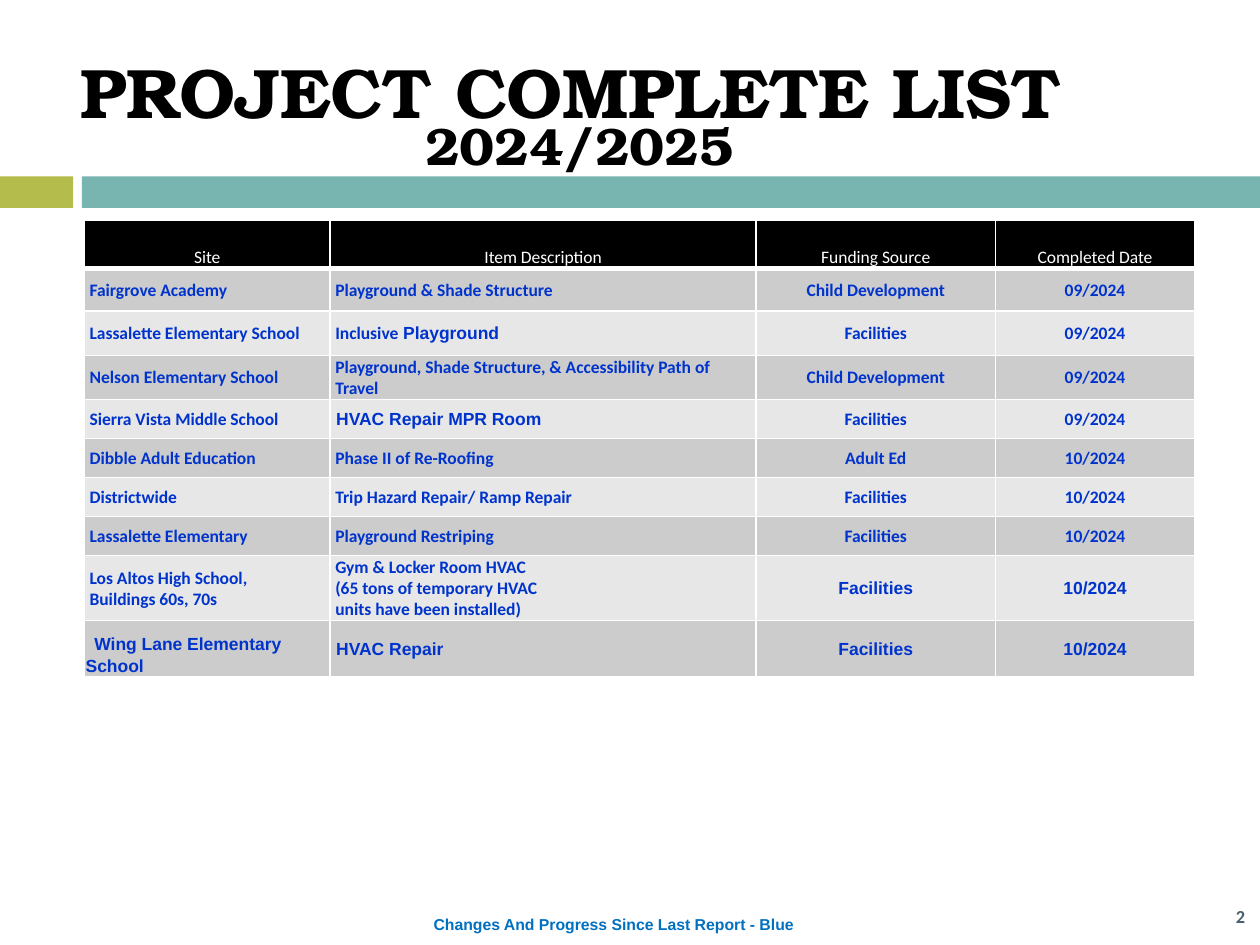
"""Build the 2024/2025 list of completed projects."""
from lxml import etree
from pptx import Presentation, util as u
from pptx.dml.color import RGBColor
from pptx.enum import shapes, text
from pptx.oxml.ns import qn

HUES = {"black": "000000", "white": "FFFFFF", "blue": "0033CC", "foot": "0070C0",
        "slate": "4A606E", "olive": "B4BC4C", "teal": "79B5B0",
        "dark": "CCCCCC", "light": "E7E7E7"}
STYLES = {
    "head": {"name": "Calibri", "size": 10, "bold": False, "color": "white"},
    "body": {"name": "Calibri", "size": 10, "bold": True, "color": "blue"},
    "arial": {"name": "Arial", "size": 10, "bold": True, "color": "blue"},
    "wide": {"name": "Arial", "size": 18, "bold": False, "color": "black"},
    "title": {"name": "TeX Gyre Bonum", "size": 40, "bold": True, "color": "black"},
    "year": {"name": "TeX Gyre Bonum", "size": 30, "bold": True, "color": "black"},
    "foot": {"name": "Arial", "size": 9, "bold": True, "color": "foot"},
    "page": {"name": "Calibri", "size": 10.5, "bold": True, "color": "slate"},
}
HEADS = ["Site", "Item Description", "Funding Source", "Completed Date"]
ROWS = [
    [" Fairgrove Academy", " Playground & Shade Structure", "Child Development", "09/2024"],
    [" Lassalette Elementary School", [("body", " Inclusive"), ("arial", " Playground")],
     "Facilities", "09/2024"],
    [" Nelson Elementary School",
     " Playground, Shade Structure, & Accessibility Path of\n Travel",
     "Child Development", "09/2024"],
    [" Sierra Vista Middle School", [("arial", " HVAC Repair MPR Room")],
     "Facilities", "09/2024"],
    [" Dibble Adult Education", " Phase II of Re-Roofing", "Adult Ed", "10/2024"],
    [" Districtwide", " Trip Hazard Repair/ Ramp Repair", "Facilities", "10/2024"],
    [" Lassalette Elementary", " Playground Restriping", "Facilities", "10/2024"],
    [" Los Altos High School,\n Buildings 60s, 70s",
     " Gym & Locker Room HVAC\n (65 tons of temporary HVAC\n units have been installed)",
     [("arial", "Facilities")], [("arial", "10/2024")]],
    [[("wide", " "), ("arial", "Wing Lane Elementary School")],
     [("arial", " HVAC Repair")], [("arial", "Facilities")], [("arial", "10/2024")]],
]
COLS = [1.95, 3.38, 1.9, 1.58]
TALLS = [0.38, 0.34, 0.35, 0.35] + [0.31] * 6
BARS = [("olive", 0, 0.58), ("teal", 0.65, 9.35)]
LABELS = [
    ("title", "PROJECT COMPLETE LIST", (0, 0.38, 9.06, 0.67), "CENTER", "MIDDLE"),
    ("foot", "Changes And Progress Since Last Report - Blue",
     (-0.13, 7.21, 10, 0.25), "CENTER", "TOP"),
    ("year", "2024/2025", (0, 0.81, 9.2, 0.67), "CENTER", "MIDDLE"),
    ("page", "2", (4.05, 7.07, 5.93, 0.4), "RIGHT", "MIDDLE"),
]


def tint(key):
    return RGBColor.from_string(HUES[key])


def paint(item, key):
    item.fill.solid()
    item.fill.fore_color.rgb = tint(key)


def write(frame, lines, align):
    for i, runs in enumerate(lines):
        para = frame.paragraphs[0] if i == 0 else frame.add_paragraph()
        para.alignment = text.PP_ALIGN[align]
        for style, words in runs:
            run = para.add_run()
            run.text = words
            for name, value in STYLES[style].items():
                if name == "color":
                    run.font.color.rgb = tint(value)
                else:
                    setattr(run.font, name, u.Pt(value) if name == "size" else value)


def edge(cell, sides):
    props = cell._tc.get_or_add_tcPr()
    for i, (side, width) in enumerate(sides.items()):
        line = etree.Element(qn("a:ln" + side), w=str(u.Pt(width)))
        fill = etree.SubElement(line, qn("a:solidFill"))
        etree.SubElement(fill, qn("a:srgbClr"), val=HUES["white"])
        props.insert(i, line)


def draw_bars(slide):
    for key, left, width in BARS:
        bar = slide.shapes.add_shape(shapes.MSO_SHAPE.RECTANGLE, u.Inches(left),
                                     u.Inches(1.4), u.Inches(width), u.Inches(0.25))
        bar.shadow.inherit = False
        paint(bar, key)
        bar.line.fill.background()


def draw_table(slide):
    area = [u.Inches(n) for n in (0.67, 1.75, sum(COLS), sum(TALLS))]
    grid = slide.shapes.add_table(len(TALLS), len(COLS), *area).table
    grid.first_row = grid.horz_banding = False
    for col, width in zip(grid.columns, COLS):
        col.width = u.Inches(width)
    for r, (row, tall) in enumerate(zip([HEADS] + ROWS, TALLS)):
        grid.rows[r].height = u.Inches(tall)
        for c, words in enumerate(row):
            cell = grid.cell(r, c)
            base = "body" if r else "head"
            lines = [words] if isinstance(words, list) else [
                [(base, line)] for line in words.split("\n")]
            write(cell.text_frame, lines, "LEFT" if r and c < 2 else "CENTER")
            look = {"margin_left": u.Inches(0.01), "margin_right": u.Inches(0.01),
                    "margin_top": u.Inches(0.01), "margin_bottom": 0,
                    "vertical_anchor": text.MSO_ANCHOR.MIDDLE if r else text.MSO_ANCHOR.BOTTOM}
            for name, value in look.items():
                setattr(cell, name, value)
            paint(cell, ("dark" if r % 2 else "light") if r else "black")
            edge(cell, {"L": 1, "R": 1, "T": 3 if r == 1 else 1, "B": 1 if r else 3})


def draw_labels(slide):
    for style, words, area, align, anchor in LABELS:
        frame = slide.shapes.add_textbox(*[u.Inches(n) for n in area]).text_frame
        frame.word_wrap = True
        frame.vertical_anchor = text.MSO_ANCHOR[anchor]
        write(frame, [[(style, words)]], align)


def main():
    deck = Presentation()
    deck.slide_width, deck.slide_height = u.Inches(10), u.Inches(7.5)
    slide = deck.slides.add_slide(deck.slide_layouts[6])
    draw_bars(slide)
    draw_table(slide)
    draw_labels(slide)
    deck.save("out.pptx")


if __name__ == "__main__":
    main()
